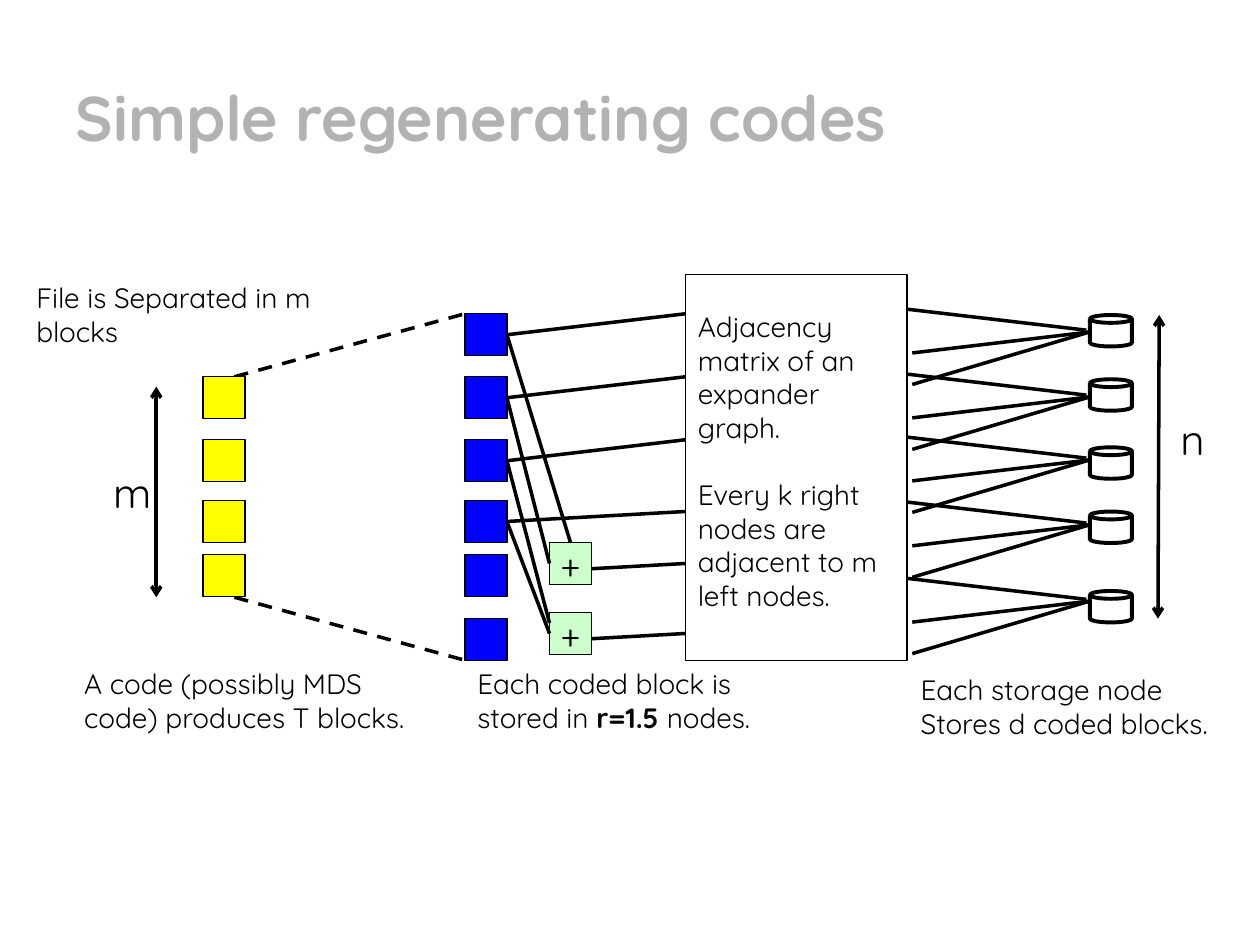
from lxml.etree import SubElement as Sub
from pptx import Presentation
from pptx.dml.color import RGBColor as Rgb
from pptx.enum.dml import MSO_LINE as Dash
from pptx.enum.shapes import MSO_CONNECTOR as Link, MSO_SHAPE as Form
from pptx.enum.text import MSO_ANCHOR as Anchor, MSO_AUTO_SIZE as Auto, PP_ALIGN as Align
from pptx.oxml.ns import qn
from pptx.util import Pt

THEME = {
    "font": "Quicksand", "head": 36, "mark": 24, "sign": 20, "body": 16,
    "ink": "000000", "grey": "B2B2B2", "white": "FFFFFF",
    "file": "FFFF00", "code": "0000FF", "sum": "CCFFCC",
    "thin": 0.75, "wire": 2, "bold": 2.25,
}
TITLE = "Simple regenerating codes"
NOTES = [
    ((13.7, 157, 180, 46), "body", [["File is Separated in m blocks"]]),
    ((41, 377.3, 198, 46), "body", [["A code (possibly MDS code) produces T blocks."]]),
    ((265.7, 377.3, 198, 46), "body", [["Each coded block is stored in ", "*r=1.5 ", "nodes."]]),
    ((519, 381, 186, 46), "body", [["Each storage node"], ["Stores d coded blocks."]]),
    ((57.6, 263, 33, 29), "mark", [["m"]]),
    ((667.4, 232.6, 33, 29), "mark", [["n"]]),
]
MATRIX = [["Adjacency matrix of an expander graph."],
          ["Every k right nodes are adjacent to m left nodes."]]
SIDE = 24
FILE_X, CODE_X, SUM_X = 116, 265.7, 314
ROWS = [179.3, 215.3, 251.3, 286, 317, 353.3]
SUMS = [310, 350]
PANEL = (391.7, 157, 126.7, 220.3)
INPUTS = [179.3, 215.3, 251.3, 292.3]
CANS = [(180, 189.7), (216.7, 226.8), (255.6, 262.8), (292.3, 299.9), (337.7, 343.5)]
CAN_X = 622.8
FAN = [(521.3, 12, 0, 0), (521.3, 30, 0, 0), (518.4, -13, -2, -1)]
EDGES = [((134, 215.3), (265.7, 179.3)), ((134, 341.3), (265.7, 377.3))]
SPANS = [((89.3, 221), (89.3, 341.3)), ((662.4, 180), (661.7, 353.5))]

deck = Presentation()
deck.slide_width, deck.slide_height = Pt(720), Pt(540)
slide = deck.slides.add_slide(deck.slide_layouts[5])


def tint(name):
    return Rgb.from_string(THEME[name])


def write(para, runs, size, ink="ink", bold=False):
    for text in runs:
        run = para.add_run()
        run.text = text.lstrip("*")
        font = run.font
        font.name, font.size = THEME["font"], Pt(THEME[size])
        font.bold = bold or text.startswith("*")
        font.color.rgb = tint(ink)


def note(box, size, paras, gap=0):
    frame = slide.shapes.add_textbox(*map(Pt, box)).text_frame
    frame.word_wrap = True
    frame.auto_size = Auto.SHAPE_TO_FIT_TEXT
    for i, runs in enumerate(paras):
        para = frame.add_paragraph() if i else frame.paragraphs[0]
        para.space_before = Pt(gap if i else 0)
        write(para, runs, size)


def shape(form, box, fill=None, width="thin"):
    item = slide.shapes.add_shape(form, *map(Pt, box))
    item.shadow.inherit = False
    if fill:
        item.fill.solid()
        item.fill.fore_color.rgb = tint(fill)
    else:
        item.fill.background()
    item.line.color.rgb = tint("ink")
    item.line.width = Pt(THEME[width])
    return item


def block(x, y, fill):
    return shape(Form.RECTANGLE, (x, y, SIDE, SIDE), fill)


def wire(start, end, dash=False, tips=False):
    item = slide.shapes.add_connector(Link.STRAIGHT, *map(Pt, (*start, *end)))
    item.line.color.rgb = tint("ink")
    item.line.width = Pt(THEME["wire"])
    if dash:
        item.line.dash_style = Dash.DASH
    if tips:
        line = item.line._get_or_add_ln()
        for tag in ("a:headEnd", "a:tailEnd"):
            Sub(line, qn(tag), type="arrow")
    Sub(item._element.spPr, qn("a:effectLst"))
    return item


title = slide.shapes.title
title.left, title.top, title.width, title.height = map(Pt, (36, 21.6, 648, 90))
frame = title.text_frame
frame.word_wrap = True
frame.vertical_anchor = Anchor.MIDDLE
frame.paragraphs[0].alignment = Align.LEFT
write(frame.paragraphs[0], [TITLE], "head", "grey", True)

for box, size, paras in NOTES:
    note(box, size, paras)
for start, end in EDGES:
    wire(start, end, dash=True)
for start, end in SPANS:
    wire(start, end, tips=True)

for y in ROWS[1:5]:
    block(FILE_X, y, "file")
codes = [block(CODE_X, y, "code") for y in ROWS]

for top, mid in CANS:
    for x, drop, back, lift in FAN:
        wire((x, mid + drop), (CAN_X + back, mid + lift))
    shape(Form.CAN, (CAN_X, top, SIDE, 18), width="bold")

shape(Form.RECTANGLE, PANEL, "white")
note((PANEL[0], 173.5, 123, 181.5), "body", MATRIX, gap=19.2)

sums = []
for y in SUMS:
    item = block(SUM_X, y, "sum")
    frame = item.text_frame
    frame.margin_left = frame.margin_right = frame.margin_top = frame.margin_bottom = 0
    frame.vertical_anchor = Anchor.MIDDLE
    frame.paragraphs[0].alignment = Align.CENTER
    write(frame.paragraphs[0], ["+"], "sign")
    wire((SUM_X + SIDE, y + 15), (PANEL[0], y + 12))
    sums.append(item)

for code, y, end in zip(codes, ROWS, INPUTS):
    wire((CODE_X + SIDE, y + SIDE / 2), (PANEL[0], end)).begin_connect(code, 3)

for i, (goal, site) in enumerate([(0, 0), (0, 1), (1, None), (1, 1)]):
    line = wire((CODE_X + SIDE, ROWS[i] + SIDE / 2), (SUM_X, SUMS[goal] + 6))
    line.begin_connect(codes[i], 3)
    if site is not None:
        line.end_connect(sums[goal], site)

deck.save("out.pptx")
